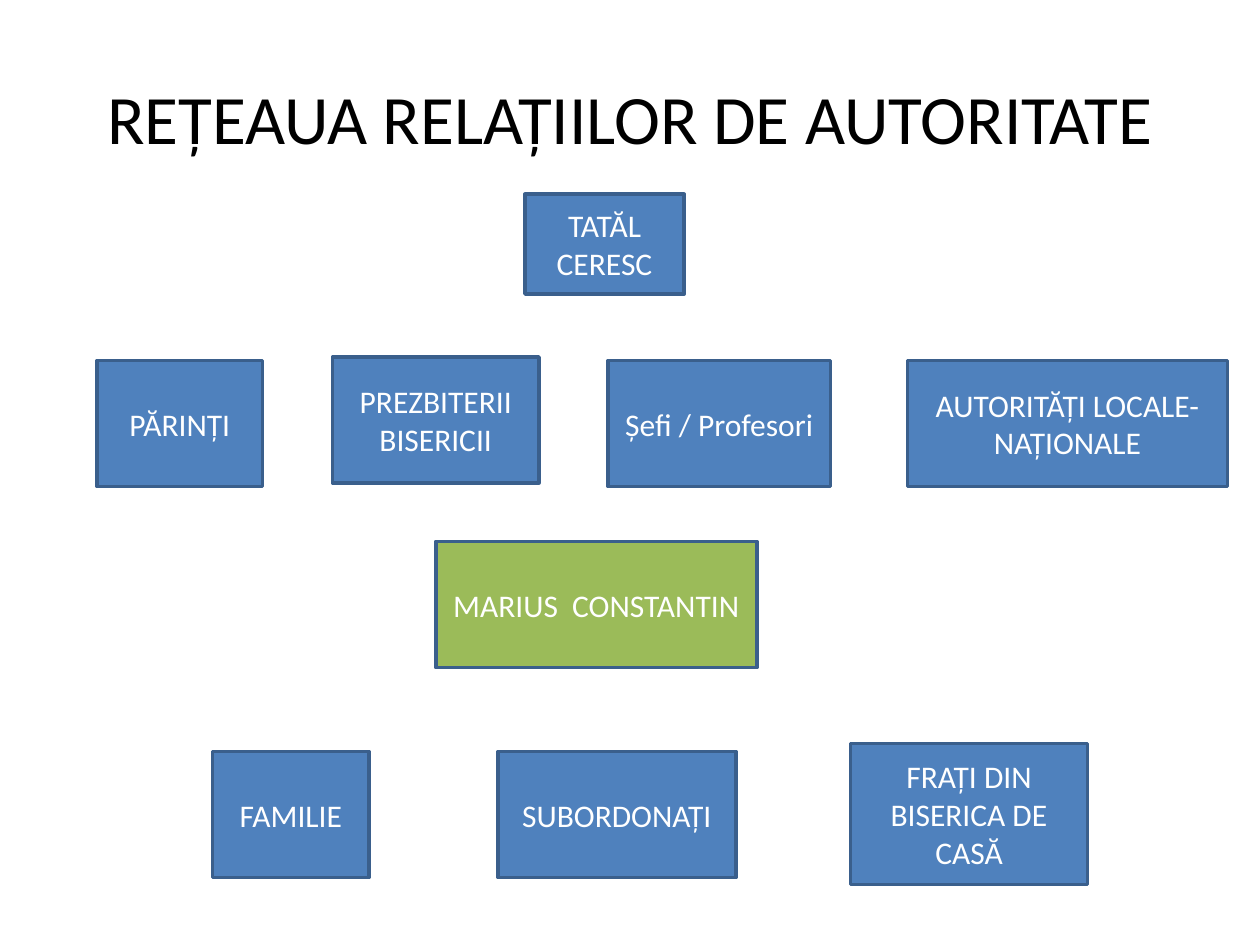
import pptx
import pptx.dml.color
import pptx.enum.shapes
import pptx.enum.text
import pptx.util

Pt = pptx.util.Pt
COLORS = {
    "title": "000000",
    "label": "FFFFFF",
    "relation": "4F81BD",
    "person": "9BBB59",
    "border": "3A5F8C",
}


def rgb(name):
    return pptx.dml.color.RGBColor.from_string(COLORS[name])


def write_text(shape, text, *, size=18, color="label"):
    """Put centred text in the middle of a shape."""
    frame = shape.text_frame
    frame.word_wrap = True
    frame.vertical_anchor = pptx.enum.text.MSO_ANCHOR.MIDDLE
    paragraph = frame.paragraphs[0]
    paragraph.alignment = pptx.enum.text.PP_ALIGN.CENTER
    run = paragraph.add_run()
    run.text = text
    run.font.name = "Calibri"
    run.font.size = Pt(size)
    run.font.color.rgb = rgb(color)


presentation = pptx.Presentation()
presentation.slide_width = Pt(720)
presentation.slide_height = Pt(540)
slide = presentation.slides.add_slide(presentation.slide_layouts[6])

title = slide.shapes.add_textbox(Pt(36), Pt(21.6), Pt(648), Pt(90))
write_text(title, "REȚEAUA RELAȚIILOR DE AUTORITATE", size=39.6, color="title")

# Text, left, top, width, height, fill
boxes = [
    ("TATĂL CERESC", 300, 111, 91, 57, "relation"),
    ("PĂRINȚI", 55.5, 206, 94.5, 72, "relation"),
    ("PREZBITERII BISERICII", 190, 204, 118, 72, "relation"),
    ("Șefi / Profesori", 347.5, 206, 127, 72, "relation"),
    ("AUTORITĂȚI LOCALE-NAȚIONALE", 518.5, 206, 183, 72, "relation"),
    ("MARIUS  CONSTANTIN", 249, 309.5, 183.5, 72, "person"),
    ("FAMILIE", 121.5, 429.5, 89.5, 72, "relation"),
    ("SUBORDONAȚI", 284.5, 429.5, 136, 72, "relation"),
    ("FRAȚI DIN BISERICA DE CASĂ", 486, 425, 135.5, 80.5, "relation"),
]
for text, left, top, width, height, fill in boxes:
    box = slide.shapes.add_shape(
        pptx.enum.shapes.MSO_SHAPE.RECTANGLE,
        Pt(left), Pt(top), Pt(width), Pt(height),
    )
    box.shadow.inherit = False
    box.fill.solid()
    box.fill.fore_color.rgb = rgb(fill)
    box.line.color.rgb = rgb("border")
    box.line.width = Pt(2)
    write_text(box, text)

presentation.save("out.pptx")
